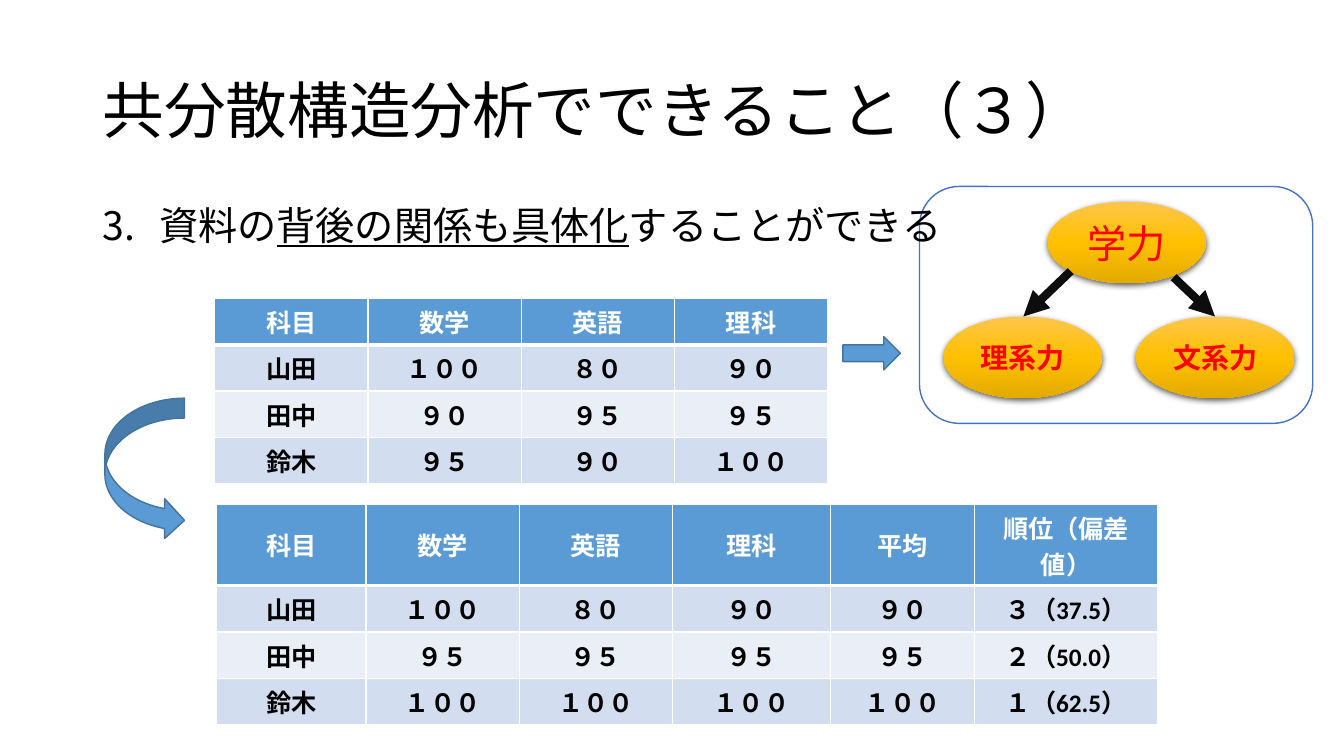
from copy import deepcopy
from lxml.etree import SubElement as Sub
from pptx import Presentation
from pptx.dml.color import RGBColor as Rgb
from pptx.enum.lang import MSO_LANGUAGE_ID as Lang
from pptx.enum.shapes import MSO_CONNECTOR as Link, MSO_SHAPE as Kind
from pptx.enum.text import MSO_ANCHOR as Anchor, PP_ALIGN as Align
from pptx.oxml.ns import qn
from pptx.util import Inches, Pt

BLACK = Rgb(0, 0, 0)
WHITE = Rgb(0xFF, 0xFF, 0xFF)
RED = Rgb(0xFF, 0, 0)
INK = Rgb(0x0D, 0x0D, 0x0D)
BLUE = Rgb(0x5B, 0x9B, 0xD5)
EDGE = Rgb(0x43, 0x73, 0x9E)
FRAME = Rgb(0x44, 0x72, 0xC4)
BANDS = Rgb(0xD2, 0xDE, 0xEF), Rgb(0xEA, 0xEF, 0xF7)
GOLD = Rgb(0xFF, 0xC6, 0x4B), Rgb(0xFF, 0xC0, 0), Rgb(0xE3, 0xAB, 0)

SCORES = [
    ["科目", "数学", "英語", "理科"],
    ["山田", "１００", "８０", "９０"],
    ["田中", "９０", "９５", "９５"],
    ["鈴木", "９５", "９０", "１００"],
]
RANKS = [
    ["科目", "数学", "英語", "理科", "平均", "順位（偏差値）"],
    ["山田", "１００", "８０", "９０", "９０", "３（37.5）"],
    ["田中", "９５", "９５", "９５", "９５", "２（50.0）"],
    ["鈴木", "１００", "１００", "１００", "１００", "１（62.5）"],
]


class Deck:
    font = "Calibri"
    row = 0.46

    def __init__(self, wide, high):
        self.show = Presentation()
        self.show.slide_width = Inches(wide)
        self.show.slide_height = Inches(high)
        self.slide = self.show.slides.add_slide(self.show.slide_layouts[6])
        self.shapes = self.slide.shapes

    def style(self, run, size, color, bold=False):
        font = run.font
        font.name, font.size, font.bold = self.font, Pt(size), bold
        font.color.rgb = color
        font.language_id = Lang.JAPANESE

    def center(self, frame, text, size, color, bold):
        frame.text = text
        para = frame.paragraphs[0]
        para.alignment = Align.CENTER
        self.style(para.runs[0], size, color, bold)

    def text(self, box, parts, size, anchor=Anchor.TOP):
        """Add a line of (text, underlined) parts and return its paragraph."""
        frame = self.shapes.add_textbox(*map(Inches, box)).text_frame
        frame.word_wrap = True
        frame.vertical_anchor = anchor
        para = frame.paragraphs[0]
        para.line_spacing = 0.9
        for words, under in parts:
            run = para.add_run()
            run.text = words
            self.style(run, size, BLACK)
            run.font.underline = under
        return para

    def point(self, box, start, parts, size):
        """Add a numbered line."""
        para = self.text(box, parts, size)
        para.space_before = Pt(10)
        props = para._p.get_or_add_pPr()
        props.set("marL", str(Inches(0.56)))
        props.set("indent", str(-Inches(0.56)))
        Sub(props, qn("a:buAutoNum"), type="arabicPeriod", startAt=str(start))

    def shape(self, kind, box, fill, line):
        shape = self.shapes.add_shape(kind, *map(Inches, box))
        shape.shadow.inherit = False
        shape.fill.solid()
        shape.fill.fore_color.rgb = fill
        shape.line.color.rgb = line
        shape.line.width = Pt(1)

    def oval(self, left, top, text, size, bold):
        oval = self.shapes.add_shape(
            Kind.OVAL, *map(Inches, (left, top, 1.57, 0.81)))
        oval.line.fill.background()
        oval.fill.gradient()
        oval.fill.gradient_angle = 270
        props = oval._element.spPr
        stops = props.find(".//" + qn("a:gsLst"))
        stops.append(deepcopy(stops[0]))
        for stop, color, place in zip(oval.fill.gradient_stops, GOLD, (0, 0.5, 1)):
            stop.color.rgb = color
            stop.position = place
        oval.shadow.inherit = False
        shade = Sub(props.find(qn("a:effectLst")), qn("a:outerShdw"),
                    blurRad=str(Pt(4.5)), dist=str(Pt(1.5)), dir="5400000",
                    algn="ctr", rotWithShape="0")
        tint = Sub(shade, qn("a:srgbClr"), val=str(BLACK))
        Sub(tint, qn("a:alpha"), val="63000")
        oval.text_frame.vertical_anchor = Anchor.MIDDLE
        self.center(oval.text_frame, text, size, RED, bold)

    def arrow(self, *ends):
        arrow = self.shapes.add_connector(Link.STRAIGHT, *map(Inches, ends))
        arrow.line.color.rgb = INK
        arrow.line.width = Pt(6)
        Sub(arrow.line._get_or_add_ln(), qn("a:tailEnd"), type="triangle")
        Sub(arrow._element.spPr, qn("a:effectLst"))

    def border(self, cell, row):
        props = cell._tc.get_or_add_tcPr()
        thick = {0: "B", 1: "T"}.get(row)
        for side in "LRTB":
            width = Pt(3 if side == thick else 1)
            line = Sub(props, qn("a:ln" + side), w=str(width))
            Sub(Sub(line, qn("a:solidFill")), qn("a:srgbClr"), val=str(WHITE))

    def table(self, left, top, cols, head, data, anchor):
        """Add a banded table; head and anchor set the header's height and text."""
        rows = [head] + [self.row] * (len(data) - 1)
        box = map(Inches, (left, top, sum(cols), sum(rows)))
        table = self.shapes.add_table(len(rows), len(cols), *box).table
        table.horz_banding = False
        for col, wide in zip(table.columns, cols):
            col.width = Inches(wide)
        for r, (high, line) in enumerate(zip(rows, data)):
            table.rows[r].height = Inches(high)
            for c, text in enumerate(line):
                cell = table.cell(r, c)
                self.border(cell, r)
                cell.fill.solid()
                cell.fill.fore_color.rgb = BANDS[(r - 1) % 2] if r else BLUE
                cell.vertical_anchor = Anchor.TOP if r else anchor
                self.center(cell.text_frame, text, 18, BLACK if r else WHITE, True)


def main():
    deck = Deck(13.33, 7.5)
    deck.shape(Kind.ROUNDED_RECTANGLE, (9.12, 1.85, 3.9, 2.35), WHITE, FRAME)
    deck.text((0.92, 0.4, 11.5, 1.45),
              [("共分散構造分析でできること（３）", False)], 44, Anchor.MIDDLE)
    deck.point((0.92, 2, 11.5, 0.81), 3,
               [("資料の", False), ("背後の関係も具体化", True),
                ("することができる", False)], 28)
    deck.table(2.13, 2.96, [1.52] * 4, deck.row, SCORES, Anchor.TOP)
    deck.table(2.15, 5, [1.48, 1.52, 1.52, 1.57, 1.43, 1.81],
               0.81, RANKS, Anchor.MIDDLE)
    deck.oval(10.39, 2, "学力", 28, False)
    deck.oval(11.27, 3.14, "文系力", 20, True)
    deck.oval(9.36, 3.14, "理系力", 20, True)
    deck.arrow(10.62, 2.69, 10.15, 3.14)
    deck.arrow(11.64, 2.75, 12.05, 3.14)
    deck.shape(Kind.CURVED_RIGHT_ARROW, (1.04, 3.95, 0.79, 1.41), BLUE, EDGE)
    deck.shape(Kind.RIGHT_ARROW, (8.36, 3.34, 0.57, 0.33), BLUE, EDGE)
    deck.show.save("out.pptx")


if __name__ == "__main__":
    main()
